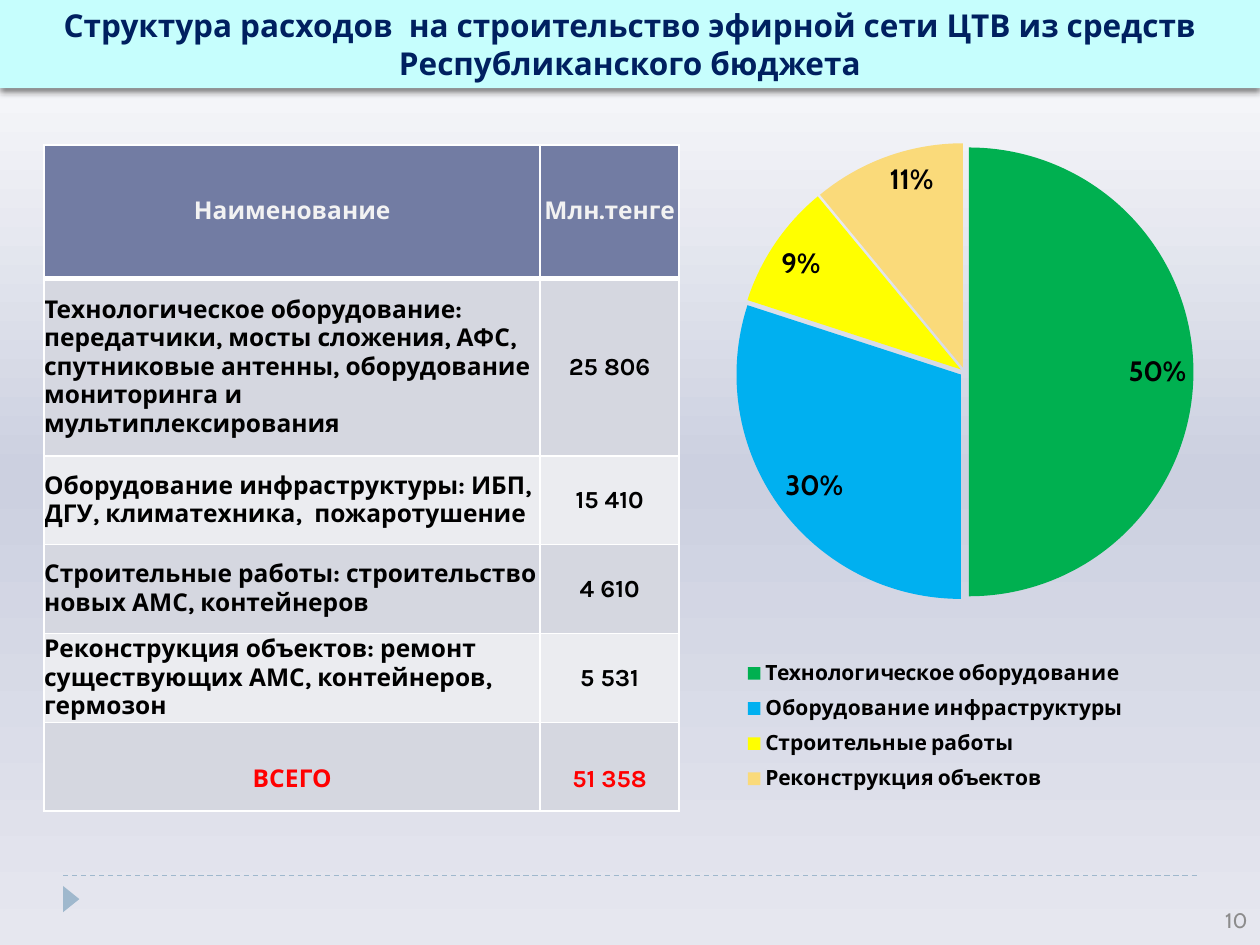
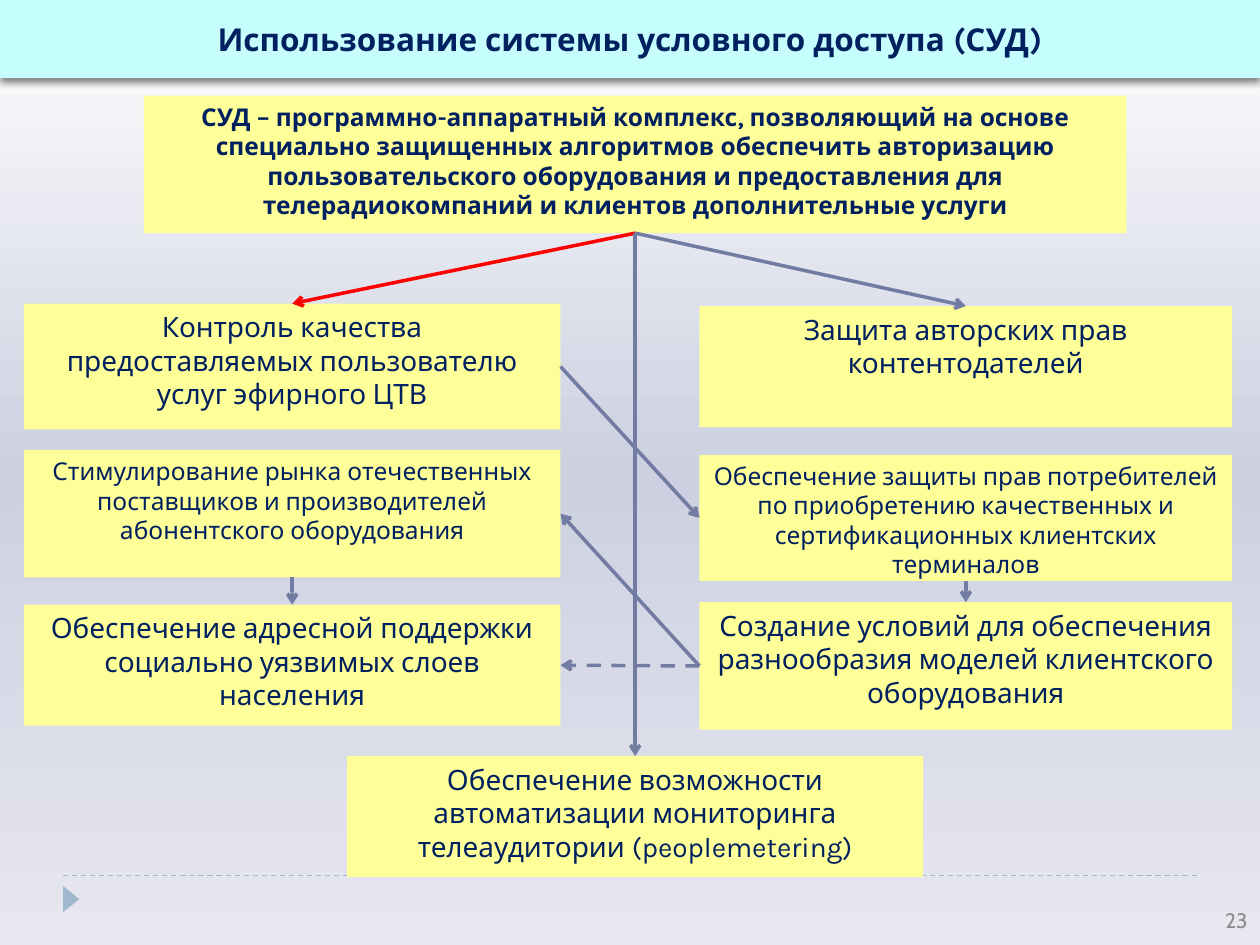
from copy import deepcopy
from dataclasses import dataclass

from lxml import etree
from pptx import Presentation
from pptx import util as u
from pptx.chart import data
from pptx.dml import color
from pptx.enum import chart as ch
from pptx.enum import dml, shapes, text
from pptx.oxml import ns


@dataclass(frozen=True)
class Theme:
    font: str = "Karla"
    number_font: str = "Cabin"
    band: str = "C6FEFD"
    navy: str = "002060"
    box: str = "FFFF99"
    accent: str = "727CA3"
    footer: str = "9FB8CD"
    grey: str = "8C8C8C"
    pale: str = "F2F2F2"
    white: str = "FFFFFF"
    black: str = "000000"
    red: str = "FF0000"
    stripes: tuple = ("D5D7E0", "EBECF0")
    backdrop: tuple = ((0, "FFFFFF"), (50, "CCD0E0"), (100, "E6E7EF"))
    title: int = 18
    large: int = 16
    body: int = 14
    small: int = 12


T = Theme()
WIDTH, HEIGHT = 25.4, 19.05

BUDGET = {
    "title": "Структура расходов  на строительство эфирной сети ЦТВ из средств Республиканского бюджета",
    "band": 1.78,
    "page": "10",
}
ACCESS = {
    "title": "Использование системы условного доступа (СУД)",
    "band": 1.57,
    "page": "23",
}

COSTS = [
    ("Наименование", "Млн.тенге"),
    ("Технологическое оборудование: передатчики, мосты сложения, АФС, "
     "спутниковые антенны, оборудование мониторинга и мультиплексирования", "25 806"),
    ("Оборудование инфраструктуры: ИБП, ДГУ, климатехника,  пожаротушение", "15 410"),
    ("Строительные работы: строительство новых АМС, контейнеров", "4 610"),
    ("Реконструкция объектов: ремонт существующих АМС, контейнеров, гермозон", "5 531"),
    ("ВСЕГО", "51 358"),
]
COST_COLS = (10, 2.8)
COST_ROWS = (2.69, 3.58) + (1.79,) * 4

SHARES = [
    ("Технологическое оборудование", 50, "00B050"),
    ("Оборудование инфраструктуры", 30, "00B0F0"),
    ("Строительные работы", 9, "FFFF00"),
    ("Реконструкция объектов", 11, "FADA7A"),
]
PLOT_AREA = (0.24, 0.07, 0.71, 0.7)
LEGEND_AREA = (0.24, 0.79, 0.62, 0.2)

LEFT, RIGHT = (0.48, 10.82), (14.1, 10.74)
BOXES = {
    "intro": ((2.9, 19.81), 1.93, 2.77, T.body,
              "СУД – программно-аппаратный комплекс, позволяющий на основе специально "
              "защищенных алгоритмов обеспечить авторизацию пользовательского оборудования "
              "и предоставления для телерадиокомпаний и клиентов дополнительные услуги"),
    "quality": (LEFT, 6.12, 2.54, T.large,
                "Контроль качества предоставляемых пользователю услуг эфирного ЦТВ"),
    "market": (LEFT, 9.07, 2.57, T.body,
               "Стимулирование рынка отечественных поставщиков и производителей "
               "абонентского оборудования"),
    "support": (LEFT, 12.19, 2.44, T.large,
                "Обеспечение адресной поддержки социально уязвимых слоев населения"),
    "copyright": (RIGHT, 6.17, 2.44, T.large, "Защита авторских прав контентодателей"),
    "consumers": (RIGHT, 9.17, 2.54, T.body,
                  "Обеспечение защиты прав потребителей по приобретению качественных и "
                  "сертификационных клиентских терминалов"),
    "models": (RIGHT, 12.14, 2.57, T.large,
               "Создание условий для обеспечения разнообразия моделей клиентского оборудования"),
    "metering": ((7, 11.61), 15.24, 2.44, T.large,
                 "Обеспечение возможности автоматизации мониторинга телеаудитории (peoplemetering)"),
}
TOP, LEFT_SIDE, BOTTOM, RIGHT_SIDE = range(4)
LINKS = [
    ("intro", BOTTOM, "quality", TOP, T.red, False),
    ("intro", BOTTOM, "copyright", TOP, T.accent, False),
    ("intro", BOTTOM, "metering", TOP, T.accent, False),
    ("quality", RIGHT_SIDE, "consumers", LEFT_SIDE, T.accent, False),
    ("models", LEFT_SIDE, "market", RIGHT_SIDE, T.accent, False),
    ("models", LEFT_SIDE, "support", RIGHT_SIDE, T.accent, True),
    ("market", BOTTOM, "support", TOP, T.accent, True),
    ("consumers", BOTTOM, "models", TOP, T.accent, True),
]


def rgb(value):
    return color.RGBColor.from_string(value)


def sub(parent, tag, **attrs):
    return etree.SubElement(parent, ns.qn(tag), {k: str(v) for k, v in attrs.items()})


def style(font, size, fill, bold=False, name=T.font):
    font.size, font.bold, font.name = u.Pt(size), bold, name
    font.color.rgb = rgb(fill)


def write(tf, value, size, fill, bold=False, name=T.font,
          align=text.PP_ALIGN.CENTER, anchor=text.MSO_ANCHOR.MIDDLE):
    tf.text = value
    tf.word_wrap = True
    tf.vertical_anchor = anchor
    p = tf.paragraphs[0]
    p.alignment = align
    style(p.runs[0].font, size, fill, bold, name)


def add_shape(s, kind, area, fill):
    sp = s.shapes.add_shape(kind, *map(u.Cm, area))
    sp.shadow.inherit = False
    sp.fill.solid()
    sp.fill.fore_color.rgb = rgb(fill)
    sp.line.fill.background()
    return sp


def add_line(s, fill, width, dashed, ends=(0, 0, 0, 0)):
    line = s.shapes.add_connector(shapes.MSO_CONNECTOR.STRAIGHT, *map(u.Cm, ends))
    line.line.color.rgb = rgb(fill)
    line.line.width = u.Pt(width)
    if dashed:
        line.line.dash_style = dml.MSO_LINE.DASH
    sub(line._element.spPr, "a:effectLst")
    return line


def set_backdrop(prs):
    master = prs.slide_master
    fill = master.background.fill
    fill.gradient()
    fill.gradient_angle = 270
    stops = master.element.find(".//" + ns.qn("a:gsLst"))
    stops.insert(1, deepcopy(stops[0]))
    for stop, (place, value) in zip(fill.gradient_stops, T.backdrop):
        stop.color.rgb = rgb(value)
        stop.position = place / 100


def add_slide(prs, frame):
    s = prs.slides.add_slide(prs.slide_layouts[6])
    add_line(s, T.footer, 0.75, True, (1.27, 17.65, 24.13, 17.65))
    marker = add_shape(s, shapes.MSO_SHAPE.ISOSCELES_TRIANGLE, (1.17, 17.96, 0.53, 0.33), T.footer)
    marker.rotation = 90
    band = add_shape(s, shapes.MSO_SHAPE.RECTANGLE, (0, 0, WIDTH, frame["band"]), T.band)
    shadow = sub(band._element.spPr.find(ns.qn("a:effectLst")), "a:outerShdw",
                 blurRad=u.Pt(4), dist=u.Pt(2), dir=5400000, rotWithShape=0)
    sub(sub(shadow, "a:srgbClr", val=T.black), "a:alpha", val=50000)
    write(band.text_frame, frame["title"], T.title, T.navy, True)
    page = s.shapes.add_textbox(*map(u.Cm, (23.62, 18.03, 1.78, 1.02)))
    write(page.text_frame, frame["page"], T.small, T.grey, name=T.number_font,
          align=text.PP_ALIGN.RIGHT)
    return s


def set_borders(cell, bottom):
    tc_pr = cell._tc.get_or_add_tcPr()
    for i, (side, width) in enumerate((("L", 1), ("R", 1), ("T", 1), ("B", bottom))):
        ln = sub(tc_pr, "a:ln" + side, w=u.Pt(width))
        sub(sub(ln, "a:solidFill"), "a:srgbClr", val=T.white)
        tc_pr.insert(i, ln)


def add_costs(s):
    area = (0.89, 2.92, sum(COST_COLS), sum(COST_ROWS))
    table = s.shapes.add_table(len(COSTS), len(COST_COLS), *map(u.Cm, area)).table
    table.first_row = table.horz_banding = False
    for col, width in zip(table.columns, COST_COLS):
        col.width = u.Cm(width)
    for i, (values, height) in enumerate(zip(COSTS, COST_ROWS)):
        table.rows[i].height = u.Cm(height)
        head, total = i == 0, i == len(COSTS) - 1
        ink = T.pale if head else T.red if total else T.black
        for j, value in enumerate(values):
            cell = table.cell(i, j)
            named = j == 0 and not head and not total
            write(cell.text_frame, value, T.body, ink, True,
                  align=text.PP_ALIGN.LEFT if named else text.PP_ALIGN.CENTER)
            cell.vertical_anchor = text.MSO_ANCHOR.MIDDLE
            cell.margin_left = cell.margin_right = cell.margin_bottom = 0
            cell.margin_top = u.Cm(0.5 if total else 0)
            cell.fill.solid()
            cell.fill.fore_color.rgb = rgb(T.accent if head else T.stripes[(i - 1) % 2])
            set_borders(cell, 3 if head else 1)


def place(element, area, inner=False):
    for old in element.findall(ns.qn("c:layout")):
        element.remove(old)
    layout = etree.Element(ns.qn("c:layout"))
    manual = sub(layout, "c:manualLayout")
    if inner:
        sub(manual, "c:layoutTarget", val="inner")
    for axis in "xy":
        sub(manual, f"c:{axis}Mode", val="edge")
    for key, value in zip("xywh", area):
        sub(manual, "c:" + key, val=value)
    element.insert(0 if inner else 1, layout)


def add_shares(s):
    names, values, fills = zip(*SHARES)
    cd = data.CategoryChartData()
    cd.categories = names
    cd.add_series("Series 1", values)
    area = map(u.Cm, (11.71, 1.12, 13, 15.19))
    chart = s.shapes.add_chart(ch.XL_CHART_TYPE.PIE, *area, cd).chart
    chart.has_title = False
    style(chart.font, 10, T.black, name=T.number_font)
    chart.has_legend = True
    chart.legend.position = ch.XL_LEGEND_POSITION.RIGHT
    chart.legend.include_in_layout = False
    style(chart.legend.font, T.small, T.black, True, T.number_font)
    plot = chart.plots[0]
    plot.vary_by_categories = True
    plot.has_data_labels = True
    labels = plot.data_labels
    labels.show_value, labels.show_percentage = False, True
    labels.number_format, labels.number_format_is_linked = "0%", False
    labels.position = ch.XL_LABEL_POSITION.INSIDE_END
    style(labels.font, T.large, T.black, True, T.number_font)
    series = plot.series[0]
    explosion = etree.Element(ns.qn("c:explosion"), val="2")
    series._element.find(ns.qn("c:tx")).addnext(explosion)
    for i, value in enumerate(fills):
        fill = series.points[i].format.fill
        fill.solid()
        fill.fore_color.rgb = rgb(value)
    place(chart._chartSpace.chart.plotArea, PLOT_AREA, True)
    place(chart.legend._element, LEGEND_AREA)


def add_scheme(s):
    boxes = {}
    for key, ((left, width), top, height, size, value) in BOXES.items():
        sp = add_shape(s, shapes.MSO_SHAPE.RECTANGLE, (left, top, width, height), T.box)
        write(sp.text_frame, value, size, T.navy, key == "intro", anchor=text.MSO_ANCHOR.TOP)
        boxes[key] = sp
    for start, start_side, end, end_side, fill, dashed in LINKS:
        arrow = add_line(s, fill, 2, dashed)
        arrow.begin_connect(boxes[start], start_side)
        arrow.end_connect(boxes[end], end_side)
        sub(arrow.line._get_or_add_ln(), "a:tailEnd", type="arrow")


def main():
    prs = Presentation()
    prs.slide_width, prs.slide_height = u.Cm(WIDTH), u.Cm(HEIGHT)
    set_backdrop(prs)
    s = add_slide(prs, BUDGET)
    add_costs(s)
    add_shares(s)
    add_scheme(add_slide(prs, ACCESS))
    prs.save("out.pptx")


if __name__ == "__main__":
    main()
